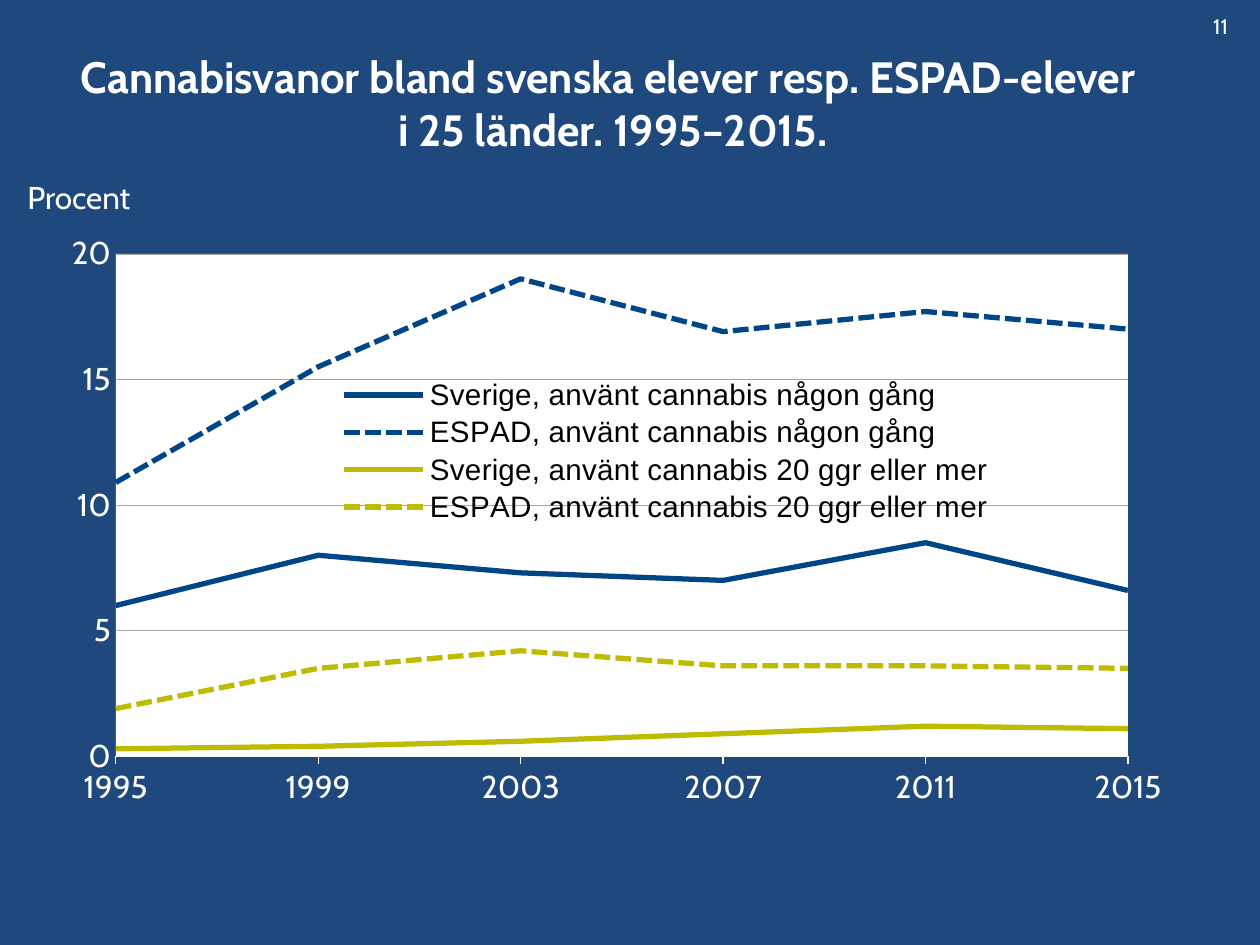
from lxml import etree
from pptx import Presentation
from pptx.chart.data import CategoryChartData
from pptx.dml.color import RGBColor
from pptx.enum.chart import XL_CHART_TYPE, XL_LEGEND_POSITION, XL_MARKER_STYLE, XL_TICK_MARK
from pptx.enum.dml import MSO_LINE
from pptx.enum.text import MSO_ANCHOR, PP_ALIGN
from pptx.oxml import parse_xml
from pptx.oxml.ns import nsdecls, qn
from pptx.util import Pt

LINE, RIGHT, NO_MARKER = XL_CHART_TYPE.LINE, XL_LEGEND_POSITION.RIGHT, XL_MARKER_STYLE.NONE
OUTSIDE, NO_TICK = XL_TICK_MARK.OUTSIDE, XL_TICK_MARK.NONE
DASH, MIDDLE, TOP, CENTER = MSO_LINE.SQUARE_DOT, MSO_ANCHOR.MIDDLE, MSO_ANCHOR.TOP, PP_ALIGN.CENTER
COLORS = {"bg": "1F497D", "white": "FFFFFF", "black": "000000", "grid": "A6A6A6",
          "ever": "004687", "often": "BEBC00"}
COLORS = {name: RGBColor.from_string(value) for name, value in COLORS.items()}


def set_font(font, size, color, name="Cabin", bold=False):
    font.size, font.name, font.bold = Pt(size), name, bold
    font.color.rgb = COLORS[color]


def set_layout(parent, index, x, y, w, h, target=""):
    for old in parent.findall(qn("c:layout")):
        parent.remove(old)
    layout = parse_xml(f"<c:layout {nsdecls('c')}><c:manualLayout/></c:layout>")
    values = [("xMode", "edge"), ("yMode", "edge"), ("x", x), ("y", y), ("w", w), ("h", h)]
    if target:
        values.insert(0, ("layoutTarget", target))
    for tag, value in values:
        etree.SubElement(layout[0], qn(f"c:{tag}")).set("val", str(value))
    parent.insert(index, layout)


prs = Presentation()
prs.slide_width, prs.slide_height = Pt(720), Pt(540)
s = prs.slides.add_slide(prs.slide_layouts[5])
s.background.fill.solid()
s.background.fill.fore_color.rgb = COLORS["bg"]

title = s.shapes.title
title.left, title.top, title.width, title.height = Pt(16.5), Pt(21.6), Pt(667.5), Pt(74)
tf = title.text_frame
tf.text = "Cannabisvanor bland svenska elever resp. ESPAD-elever \vi 25 länder. 1995–2015."
tf.vertical_anchor = MIDDLE
p = tf.paragraphs[0]
p.alignment = CENTER
for r in p.runs:
    set_font(r.font, 25, "white", bold=True)

data = CategoryChartData(number_format="0.0")
data.categories = ["1995", "1999", "2003", "2007", "2011", "2015"]
series_rows = [
    ("Sverige, använt cannabis någon gång", (6, 8, 7.3, 7, 8.5, 6.6), "ever", None),
    ("ESPAD, använt cannabis någon gång", (10.9, 15.5, 19, 16.9, 17.7, 17), "ever", DASH),
    ("Sverige, använt cannabis 20 ggr eller mer", (0.3, 0.4, 0.6, 0.9, 1.2, 1.1), "often", None),
    ("ESPAD, använt cannabis 20 ggr eller mer", (1.9, 3.5, 4.2, 3.6, 3.6, 3.5), "often", DASH),
]
for name, values, color, dash in series_rows:
    data.add_series(name, values)
chart = s.shapes.add_chart(LINE, Pt(28), Pt(112.3), Pt(635.8), Pt(363.6), data).chart
chart.has_title = False
set_font(chart.font, 16.9, "white", "Times New Roman", True)
chart.plots[0].vary_by_categories = False
for series, (name, values, color, dash) in zip(chart.plots[0].series, series_rows):
    series.smooth = False
    series.marker.style = NO_MARKER
    line = series.format.line
    line.width = Pt(3)
    line.color.rgb = COLORS[color]
    if dash:
        line.dash_style = dash

cat_axis, val_axis = chart.category_axis, chart.value_axis
for axis, tick, width in ((cat_axis, OUTSIDE, 0.75), (val_axis, NO_TICK, 0.23)):
    axis.major_tick_mark, axis.minor_tick_mark = tick, NO_TICK
    set_font(axis.tick_labels.font, 18, "white")
    axis.format.line.width = Pt(width)
    axis.format.line.color.rgb = COLORS["white"]
val_axis.minimum_scale, val_axis.maximum_scale, val_axis.major_unit = 0, 20, 5
val_axis.tick_labels.number_format = "0"
val_axis.tick_labels.number_format_is_linked = False
grid = val_axis.major_gridlines.format.line
grid.width = Pt(0.23)
grid.color.rgb = COLORS["grid"]

chart.has_legend = True
legend = chart.legend
legend.position = RIGHT
legend.include_in_layout = True
set_font(legend.font, 16.9, "black", "Arial")
set_layout(legend._element, 1, 0.26, 0.28, 0.59, 0.24)

plot_area = chart._chartSpace.find(".//" + qn("c:plotArea"))
set_layout(plot_area, 0, 0.06, 0.09, 0.91, 0.79, "inner")
plot_area.find(".//" + qn("c:majorUnit")).addprevious(
    parse_xml(f'<c:crossBetween {nsdecls("c")} val="midCat"/>'))
plot_area.append(parse_xml(
    f"<c:spPr {nsdecls('c', 'a')}><a:solidFill><a:srgbClr val=\"{COLORS['white']}\"/>"
    "</a:solidFill></c:spPr>"))

for text, left, top, width, height, size, anchor in (
    ("Procent", 8.6, 98, 84.2, 29, 18, MIDDLE),
    ("11", 686.2, 4.3, 33.8, 21.6, 12, TOP),
):
    tf = s.shapes.add_textbox(Pt(left), Pt(top), Pt(width), Pt(height)).text_frame
    tf.word_wrap = True
    tf.vertical_anchor = anchor
    tf.text = text
    set_font(tf.paragraphs[0].runs[0].font, size, "white")

prs.save("out.pptx")
